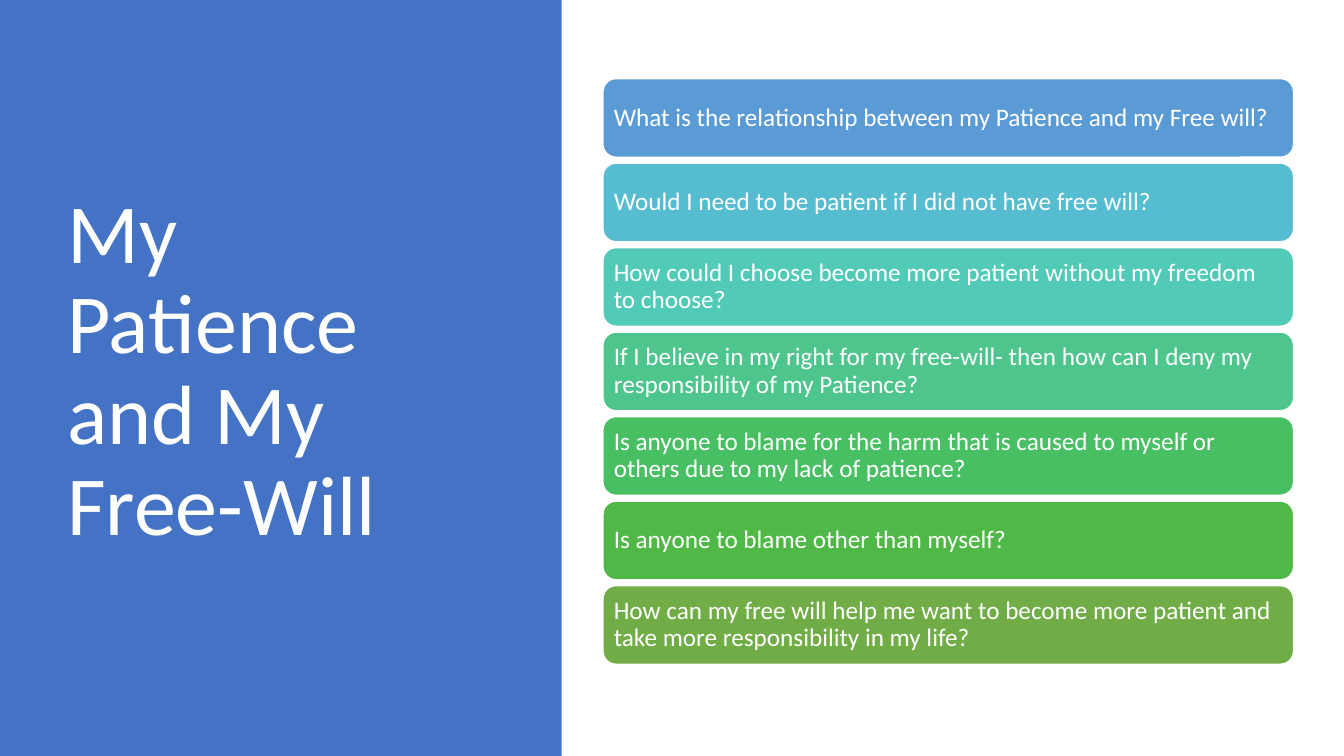
from pptx import Presentation
from pptx.dml.color import RGBColor
from pptx.enum.shapes import MSO_SHAPE
from pptx.enum.text import MSO_ANCHOR, PP_ALIGN
from pptx.util import Inches, Pt

RECTANGLE = MSO_SHAPE.RECTANGLE
ROUNDED = MSO_SHAPE.ROUNDED_RECTANGLE
MIDDLE = MSO_ANCHOR.MIDDLE
LEFT = PP_ALIGN.LEFT

FONT = "Calibri"
SLIDE_WIDTH, SLIDE_HEIGHT = 13.33, 7.5
PANEL_WIDTH = 5.57
TITLE_BOX = (0.57, 0.68, 4.16, 6.02)
STACK_LEFT, STACK_TOP, STACK_WIDTH, STACK_HEIGHT = 5.98, 0.78, 6.85, 5.81
CARD_HEIGHT = 0.78
CARD_INSET = 0.07

COLORS = {
    "panel": "4472C4",
    "white": "FFFFFF",
    "blue": "5B9BD5",
    "cyan": "56BCD0",
    "turquoise": "52CAB8",
    "mint": "4DC58D",
    "emerald": "49BF64",
    "green": "50B846",
    "olive": "70AD47",
}

QUESTIONS = [
    ("blue", "What is the relationship between my Patience and my Free will?"),
    ("cyan", "Would I need to be patient if I did not have free will?"),
    ("turquoise", "How could I choose become more patient without my freedom to choose?"),
    ("mint", "If I believe in my right for my free-will- then how can I deny my responsibility of my Patience?"),
    ("emerald", "Is anyone to blame for the harm that is caused to myself or others due to my lack of patience?"),
    ("green", "Is anyone to blame other than myself?"),
    ("olive", "How can my free will help me want to become more patient and take more responsibility in my life?"),
]


def color(name):
    return RGBColor.from_string(COLORS[name])


def add_block(slide, kind, box, fill):
    shape = slide.shapes.add_shape(kind, *map(Inches, box))
    shape.shadow.inherit = False
    shape.fill.solid()
    shape.fill.fore_color.rgb = color(fill)
    shape.line.fill.background()
    return shape


def write_text(shape, text, size):
    frame = shape.text_frame
    frame.word_wrap = True
    frame.vertical_anchor = MIDDLE
    paragraph = frame.paragraphs[0]
    paragraph.text = text
    paragraph.alignment = LEFT
    paragraph.line_spacing = 0.9
    paragraph.font.name = FONT
    paragraph.font.size = Pt(size)
    paragraph.font.color.rgb = color("white")
    return frame


def add_title(slide, text):
    write_text(slide.shapes.add_textbox(*map(Inches, TITLE_BOX)), text, 60)


def add_question(slide, top, fill, text):
    card = add_block(slide, ROUNDED, (STACK_LEFT, top, STACK_WIDTH, CARD_HEIGHT), fill)
    card.line.color.rgb = color("white")
    card.line.width = Pt(1)
    frame = write_text(card, text, 18)
    frame.margin_left = frame.margin_right = Inches(CARD_INSET)
    frame.margin_top = frame.margin_bottom = Inches(CARD_INSET)


def main():
    presentation = Presentation()
    presentation.slide_width = Inches(SLIDE_WIDTH)
    presentation.slide_height = Inches(SLIDE_HEIGHT)
    slide = presentation.slides.add_slide(presentation.slide_layouts[6])

    add_block(slide, RECTANGLE, (0, 0, PANEL_WIDTH, SLIDE_HEIGHT), "panel")
    add_title(slide, "My Patience and My Free-Will")

    row_step = (STACK_HEIGHT - CARD_HEIGHT) / (len(QUESTIONS) - 1)
    for row, (fill, text) in enumerate(QUESTIONS):
        add_question(slide, STACK_TOP + row * row_step, fill, text)

    presentation.save("out.pptx")


if __name__ == "__main__":
    main()
